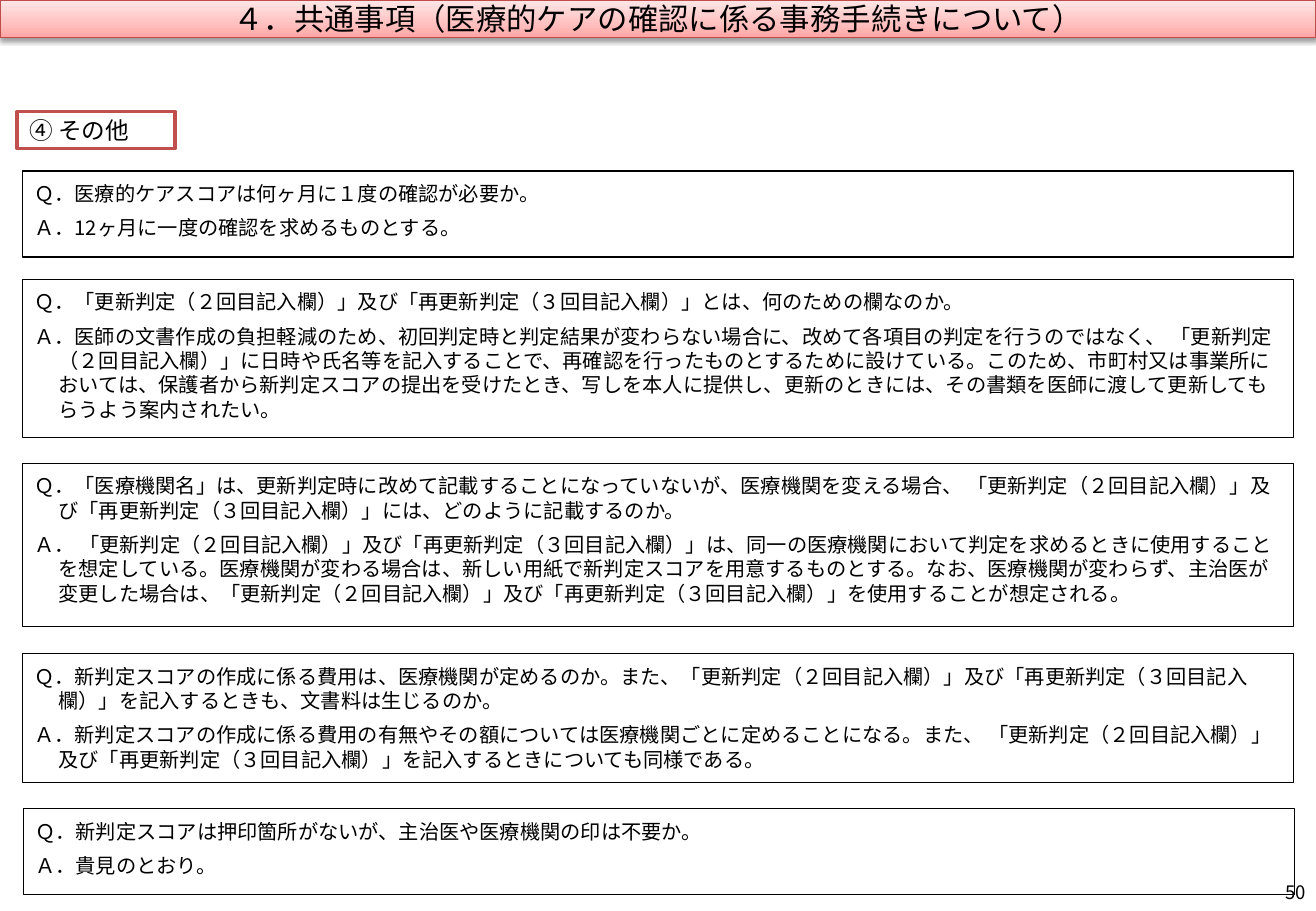
from dataclasses import dataclass

from lxml import etree
from pptx import Presentation
from pptx.dml.color import RGBColor
from pptx.enum.shapes import MSO_SHAPE
from pptx.enum.text import MSO_ANCHOR, MSO_AUTO_SIZE, PP_ALIGN
from pptx.oxml import parse_xml
from pptx.oxml.ns import nsdecls, qn
from pptx.util import Emu, Pt

RECT = MSO_SHAPE.RECTANGLE
TOP, MIDDLE = MSO_ANCHOR.TOP, MSO_ANCHOR.MIDDLE
LEFT, CENTER, RIGHT = PP_ALIGN.LEFT, PP_ALIGN.CENTER, PP_ALIGN.RIGHT
NO_FIT = MSO_AUTO_SIZE.NONE

PX = 7620  # EMU in one px, 120 px to the inch
FONT = "Noto Sans CJK JP"
BLACK, WHITE, RED = "000000", "FFFFFF", "C0504D"
LEADING = 1.2


@dataclass
class Box:
    left: int
    top: int
    width: int
    height: int


@dataclass
class Pair:
    top: int
    height: int
    ask: str
    reply: str
    left: int = 22


PAIRS = [
    Pair(169, 85, "Ｑ．医療的ケアスコアは何ヶ月に１度の確認が必要か。",
         "Ａ．12ヶ月に一度の確認を求めるものとする。"),
    Pair(276, 156,
         "Ｑ．「更新判定（２回目記入欄）」及び「再更新判定（３回目記入欄）」とは、何のための欄なのか。",
         "Ａ．医師の文書作成の負担軽減のため、初回判定時と判定結果が変わらない場合に、改めて各項目の"
         "判定を行うのではなく、 「更新判定（２回目記入欄）」に日時や氏名等を記入することで、再確認を"
         "行ったものとするために設けている。このため、市町村又は事業所においては、保護者から新判定"
         "スコアの提出を受けたとき、写しを本人に提供し、更新のときには、その書類を医師に渡して更新"
         "してもらうよう案内されたい。"),
    Pair(458, 161,
         "Ｑ．「医療機関名」は、更新判定時に改めて記載することになっていないが、医療機関を変える場合、 "
         "「更新判定（２回目記入欄）」及び「再更新判定（３回目記入欄）」には、どのように記載するのか。",
         "Ａ． 「更新判定（２回目記入欄）」及び「再更新判定（３回目記入欄）」は、同一の医療機関において"
         "判定を求めるときに使用することを想定している。医療機関が変わる場合は、新しい用紙で新判定"
         "スコアを用意するものとする。なお、医療機関が変わらず、主治医が変更した場合は、"
         "「更新判定（２回目記入欄）」及び「再更新判定（３回目記入欄）」を使用することが想定される。"),
    Pair(646, 127,
         "Ｑ．新判定スコアの作成に係る費用は、医療機関が定めるのか。また、「更新判定（２回目記入欄）」"
         "及び「再更新判定（３回目記入欄）」を記入するときも、文書料は生じるのか。",
         "Ａ．新判定スコアの作成に係る費用の有無やその額については医療機関ごとに定めることになる。"
         "また、 「更新判定（２回目記入欄）」及び「再更新判定（３回目記入欄）」を記入するときについても"
         "同様である。"),
    Pair(799, 85, "Ｑ．新判定スコアは押印箇所がないが、主治医や医療機関の印は不要か。",
         "Ａ．貴見のとおり。", left=23),
]


def px(count: int) -> Emu:
    return Emu(count * PX)


def color(code: str) -> RGBColor:
    return RGBColor.from_string(code)


def write(shape, *lines: str, size: int, align=LEFT, anchor=TOP,
          hang: int = 0, gap: int = 0, side: int = 12, edge: int = 0) -> None:
    """Fill a shape with one paragraph for each line of text."""
    frame = shape.text_frame
    frame.word_wrap = True
    frame.auto_size = NO_FIT
    frame.vertical_anchor = anchor
    frame.margin_left = frame.margin_right = px(side)
    frame.margin_top = frame.margin_bottom = px(edge)
    for index, line in enumerate(lines):
        para = frame.add_paragraph() if index else frame.paragraphs[0]
        para.alignment = align
        para.line_spacing = Pt(size * LEADING)
        para.space_before = Pt(gap if index else 0)
        props = para._p.get_or_add_pPr()
        props.set("marL", str(px(hang)))
        props.set("indent", str(px(-hang)))
        run = para.add_run()
        run.text = line
        run.font.size = Pt(size)
        run.font.name = FONT
        run.font.color.rgb = color(BLACK)
        etree.SubElement(run._r.get_or_add_rPr(), qn("a:ea"), typeface=FONT)


def place(shape, box: Box) -> None:
    shape.left, shape.top = px(box.left), px(box.top)
    shape.width, shape.height = px(box.width), px(box.height)


def frame_box(slide, box: Box, line: str, weight: float, fill: str = ""):
    """Draw a bordered rectangle, with or without a fill."""
    shape = slide.shapes.add_shape(RECT, 0, 0, 0, 0)
    place(shape, box)
    shape.shadow.inherit = False
    if fill:
        shape.fill.solid()
        shape.fill.fore_color.rgb = color(fill)
    else:
        shape.fill.background()
    shape.line.color.rgb = color(line)
    shape.line.width = Pt(weight)
    return shape


def banner(title) -> None:
    """Give the title bar its gradient, border and shadow."""
    place(title, Box(0, 0, 1300, 37))
    title.line.color.rgb = color("BF4C48")
    title.line.width = Pt(0.75)
    stops = "".join(
        f'<a:gs pos="{pos * 1000}"><a:srgbClr val="{code}"/></a:gs>'
        for pos, code in ((0, "FFA6A5"), (35, "FFC0BF"), (100, "FFE7E7")))
    props = title._element.spPr
    props.find(qn("a:ln")).addprevious(parse_xml(
        f'<a:gradFill {nsdecls("a")} rotWithShape="1"><a:gsLst>{stops}</a:gsLst>'
        '<a:lin ang="16200000" scaled="0"/></a:gradFill>'))
    props.append(parse_xml(
        f'<a:effectLst {nsdecls("a")}><a:outerShdw blurRad="40000" dist="20000" '
        f'dir="5400000" rotWithShape="0"><a:srgbClr val="{BLACK}">'
        '<a:alpha val="38000"/></a:srgbClr></a:outerShdw></a:effectLst>'))


def main() -> None:
    deck = Presentation()
    deck.slide_width, deck.slide_height = px(1300), px(900)
    slide = deck.slides.add_slide(deck.slide_layouts[5])

    # Title bar
    title = slide.shapes.title
    banner(title)
    write(title, "４．共通事項（医療的ケアの確認に係る事務手続きについて）",
          size=18, align=CENTER, anchor=MIDDLE)

    # Section label
    label = frame_box(slide, Box(17, 110, 156, 37), RED, 2, WHITE)
    write(label, "④ その他", size=14, anchor=MIDDLE, hang=23)

    # Questions and answers
    for pair in PAIRS:
        box = Box(pair.left, pair.top, 1256, pair.height)
        shape = frame_box(slide, box, BLACK, 0.75)
        write(shape, pair.ask, pair.reply, size=12, hang=24, gap=6, edge=10)

    # Page number
    page = slide.shapes.add_textbox(px(998), px(857), px(302), px(48))
    write(page, "50", size=11, align=RIGHT, anchor=MIDDLE, side=10)

    deck.save("out.pptx")


if __name__ == "__main__":
    main()
